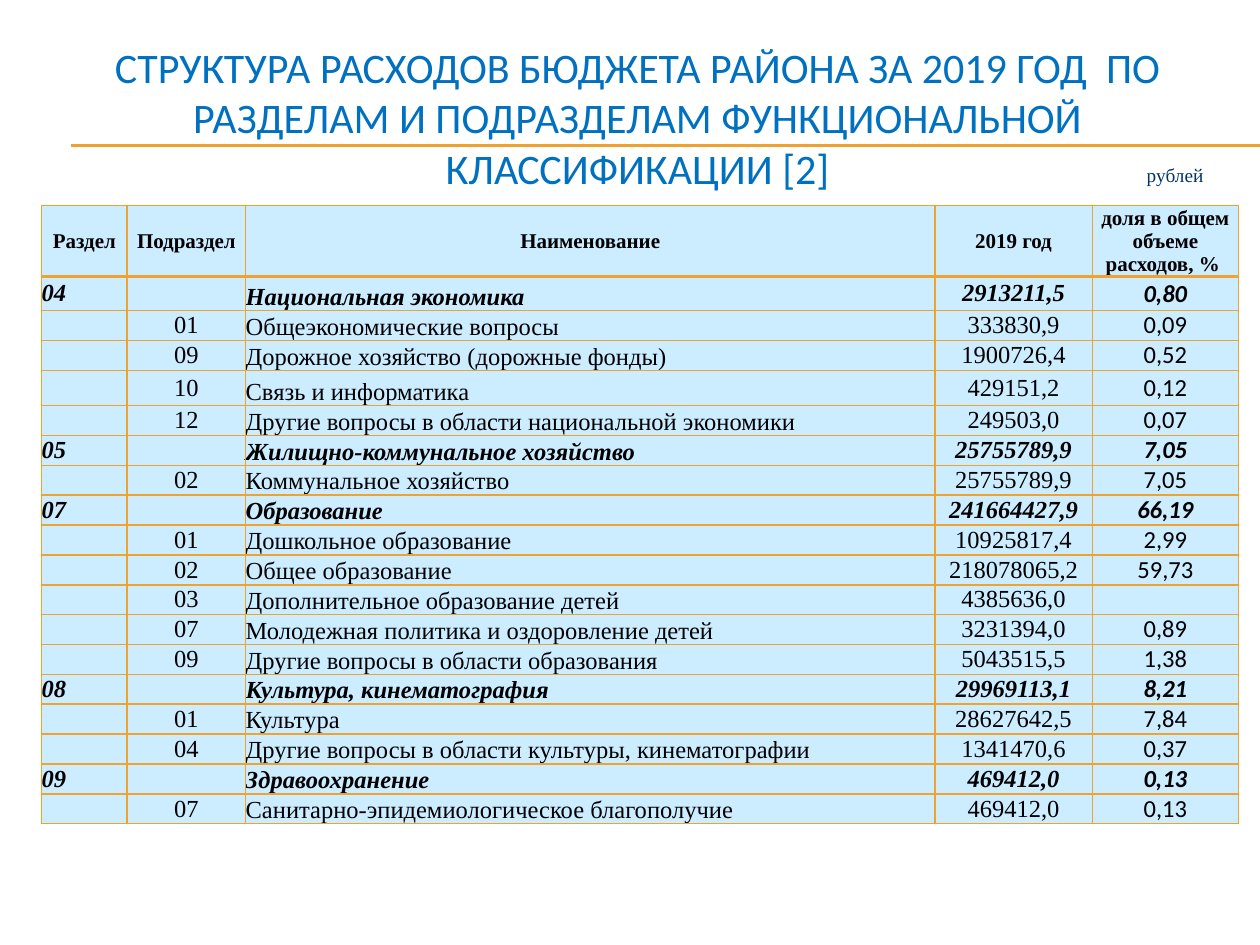
from lxml.etree import SubElement
from pptx import Presentation
from pptx.dml.color import RGBColor
from pptx.enum.shapes import MSO_CONNECTOR as CONN
from pptx.enum.text import MSO_ANCHOR as ANCHOR, MSO_AUTO_SIZE as AUTO, PP_ALIGN as ALIGN
from pptx.oxml import parse_xml
from pptx.oxml.ns import nsdecls, qn
from pptx.util import Inches, Pt

ORANGE = RGBColor(0xF0, 0xA2, 0x2E)
BLUE = RGBColor(0x00, 0x70, 0xC0)
NAVY = RGBColor(0x00, 0x33, 0x66)
PALE = RGBColor(0xCC, 0xEC, 0xFF)
BLACK = RGBColor(0x00, 0x00, 0x00)
SANS, SERIF = "Calibri", "Times New Roman"

TITLE = ("СТРУКТУРА РАСХОДОВ БЮДЖЕТА РАЙОНА ЗА 2019 ГОД  ПО РАЗДЕЛАМ "
         "И ПОДРАЗДЕЛАМ ФУНКЦИОНАЛЬНОЙ КЛАССИФИКАЦИИ [2]")
HEADER = ("Раздел", "Подраздел", "Наименование", "2019 год",
          "доля в общем объеме расходов, % ")
EXPENSES = [
    ("04", "", "Национальная экономика", "2913211,5", "0,80"),
    ("", "01", "Общеэкономические вопросы", "333830,9", "0,09"),
    ("", "09", "Дорожное хозяйство (дорожные фонды)", "1900726,4", "0,52"),
    ("", "10", "Связь и информатика", "429151,2", "0,12"),
    ("", "12", "Другие вопросы в области национальной экономики", "249503,0", "0,07"),
    ("05", "", "Жилищно-коммунальное хозяйство", "25755789,9", "7,05"),
    ("", "02", "Коммунальное хозяйство", "25755789,9", "7,05"),
    ("07", "", "Образование", "241664427,9", "66,19"),
    ("", "01", "Дошкольное образование", "10925817,4", "2,99"),
    ("", "02", "Общее образование", "218078065,2", "59,73"),
    ("", "03", "Дополнительное образование детей", "4385636,0", ""),
    ("", "07", "Молодежная политика и оздоровление детей", "3231394,0", "0,89"),
    ("", "09", "Другие вопросы в области образования", "5043515,5", "1,38"),
    ("08", "", "Культура, кинематография", "29969113,1", "8,21"),
    ("", "01", "Культура", "28627642,5", "7,84"),
    ("", "04", "Другие вопросы в области культуры, кинематографии", "1341470,6", "0,37"),
    ("09", "", "Здравоохранение", "469412,0", "0,13"),
    ("", "07", "Санитарно-эпидемиологическое благополучие", "469412,0", "0,13"),
]
COL_SPANS = (6.8, 9.4, 54.7, 12.5, 11.6)
HEADER_SPAN, ROW_SPAN = 5.6, 2.37
TALL_ROWS = {1: 2.7, 4: 2.8}


def grid(n):
    return Inches(n / 10)


class Deck:
    def __init__(self, cols, rows):
        self.prs = Presentation()
        self.prs.slide_width, self.prs.slide_height = grid(cols), grid(rows)
        self.s = self.prs.slides.add_slide(self.prs.slide_layouts[5])

    def set_text(self, tf, text, size, color, font=SERIF, align=ALIGN.CENTER,
                 bold=False, italic=False):
        p = tf.paragraphs[0]
        p.text, p.alignment = text, align
        for r in p.runs:
            f = r.font
            f.size, f.name, f.bold, f.italic = Pt(size), font, bold, italic
            f.color.rgb = color
        if not text:
            SubElement(p._p, qn("a:endParaRPr"), sz=str(size * 100))

    def title(self, text, *box):
        sp = self.s.shapes.title
        sp.left, sp.top, sp.width, sp.height = map(grid, box)
        tf = sp.text_frame
        tf.word_wrap, tf.auto_size, tf.vertical_anchor = True, AUTO.NONE, ANCHOR.MIDDLE
        self.set_text(tf, text, 24, BLUE, SANS)

    def rule(self, x1, x2, y):
        ln = self.s.shapes.add_connector(CONN.STRAIGHT, grid(x1), grid(y), grid(x2), grid(y))
        ln.line.color.rgb, ln.line.width = ORANGE, Pt(0.75)
        SubElement(ln._element.spPr, qn("a:effectLst"))
        self.s.shapes._spTree.insert(2, ln._element)

    def label(self, text, *box):
        tf = self.s.shapes.add_textbox(*map(grid, box)).text_frame
        tf.word_wrap, tf.auto_size = False, AUTO.SHAPE_TO_FIT_TEXT
        self.set_text(tf, text, 11, NAVY, align=ALIGN.RIGHT)

    def borders(self, cell, bottom):
        tcPr = cell._tc.get_or_add_tcPr()
        for i, (side, pt) in enumerate((("L", 1), ("R", 1), ("T", 1), ("B", bottom))):
            tcPr.insert(i, parse_xml(
                f'<a:ln{side} {nsdecls("a")} w="{Pt(pt)}"><a:solidFill>'
                f'<a:srgbClr val="{ORANGE}"/></a:solidFill></a:ln{side}>'))

    def cell(self, cell, text, row, col, section):
        head = row == 0
        inset = Inches(0.01) if head else 0
        cell.margin_left = cell.margin_right = cell.margin_top = inset
        cell.margin_bottom = 0
        low = col == (4 if head else 2)
        cell.vertical_anchor = ANCHOR.BOTTOM if low else ANCHOR.MIDDLE
        cell.fill.solid()
        cell.fill.fore_color.rgb = PALE
        self.borders(cell, 2 if head else 1)
        self.set_text(cell.text_frame, text, 12 if head else 14, BLACK,
                      SANS if col == 4 and not head else SERIF,
                      ALIGN.LEFT if col in (0, 2) and not head else ALIGN.CENTER,
                      head or section, section)

    def table(self, rows, x, y):
        heights = [HEADER_SPAN] + [TALL_ROWS.get(i, ROW_SPAN) for i in range(1, len(rows))]
        tbl = self.s.shapes.add_table(len(rows), len(COL_SPANS), grid(x), grid(y),
                                      grid(sum(COL_SPANS)), grid(sum(heights))).table
        tbl.horz_banding = tbl.first_row = False
        for column, span in zip(tbl.columns, COL_SPANS):
            column.width = grid(span)
        for i, (values, height) in enumerate(zip(rows, heights)):
            tbl.rows[i].height = grid(height)
            section = i > 0 and values[0] != ""
            for j, text in enumerate(values):
                self.cell(tbl.cell(i, j), text, i, j, section)


def main():
    deck = Deck(100, 75)
    for y in (11.6, 11.5):
        deck.rule(5.6, 100, y)
    deck.title(TITLE, 3.1, 4.7, 95, 9.2)
    deck.table([HEADER] + EXPENSES, 3.3, 16.3)
    deck.label("рублей", 89.9, 12.5, 6.6, 2.9)
    deck.prs.save("out.pptx")


if __name__ == "__main__":
    main()
